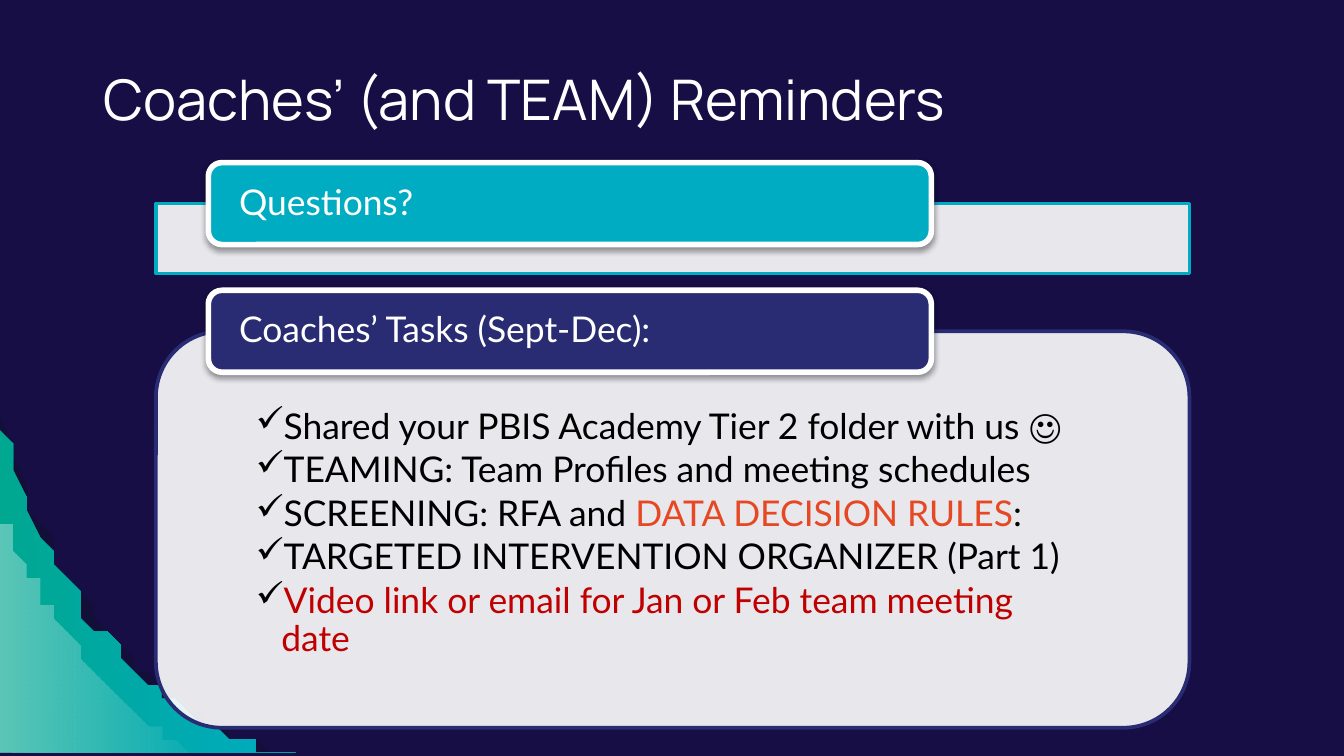
from lxml import etree
from pptx import Presentation
from pptx.dml.color import RGBColor
from pptx.enum.shapes import MSO_SHAPE
from pptx.enum.text import MSO_ANCHOR, PP_ALIGN
from pptx.oxml.ns import qn
from pptx.util import Inches, Pt

RECT, ROUND = MSO_SHAPE.RECTANGLE, MSO_SHAPE.ROUNDED_RECTANGLE
TOP, MIDDLE, LEFT = MSO_ANCHOR.TOP, MSO_ANCHOR.MIDDLE, PP_ALIGN.LEFT
COL = ROW = Inches(0.1)
CYAN, GREEN, NAVY, WHITE, BLACK = "00ACC2", "00A791", "292C73", "FFFFFF", "000000"


def paint(color, hex_color, alpha=100):
    color.rgb = RGBColor.from_string(hex_color)
    if alpha < 100:
        for clr in color._xFill.iter(qn("a:srgbClr")) if hasattr(color, "_xFill") else []:
            etree.SubElement(clr, qn("a:alpha"), val=str(alpha * 1000))


def set_alpha(sp, alphas):
    colors = sp._element.spPr.iter(qn("a:srgbClr"))
    for clr, alpha in zip(colors, alphas):
        etree.SubElement(clr, qn("a:alpha"), val=str(alpha * 1000))


prs = Presentation()
prs.slide_width, prs.slide_height = 100 * COL, Inches(5.625)
slide = prs.slides.add_slide(prs.slide_layouts[6])
bg = slide.background.fill
bg.solid()
paint(bg.fore_color, "160E44")

bottom = 56.25
waves = [
    [(0, 31), (7.3, 55.4), (22.7, bottom), (22.7, bottom)],
    [(0, 31.6), (7.2, 55.5), (22.1, bottom), (22.1, bottom)],
    [(0, 38), (0, 38), (6.9, 55.1), (16.2, bottom)],
]
wave_fills = [(["12102F"], [54]), ([GREEN, CYAN], [100, 100]), ([WHITE, WHITE], [36, 0])]
for curve, (colors, alphas) in zip(waves, wave_fills):
    points = []
    for step in range(41):
        t = step / 40
        weights = [(1 - t) ** 3, 3 * t * (1 - t) ** 2, 3 * t * t * (1 - t), t ** 3]
        points.append([sum(w * pt[axis] for w, pt in zip(weights, curve)) for axis in (0, 1)])
    builder = slide.shapes.build_freeform(*points[0], scale=COL)
    builder.add_line_segments(points[1:] + [(0, bottom)], close=True)
    sp = builder.convert_to_shape()
    sp.shadow.inherit = False
    sp.line.fill.background()
    if len(colors) == 1:
        sp.fill.solid()
        paint(sp.fill.fore_color, colors[0])
    else:
        sp.fill.gradient()
        sp.fill.gradient_angle = 0
        for stop, position, color in zip(sp.fill.gradient_stops, (0, 1), colors):
            stop.position = position
            paint(stop.color, color)
    set_alpha(sp, alphas)

tasks = [
    [("Shared your PBIS Academy Tier 2 folder with us ☺", BLACK)],
    [("TEAMING: Team Profiles and meeting schedules", BLACK)],
    [("SCREENING: RFA and ", BLACK), ("DATA DECISION RULES", "E64823"), (":", BLACK)],
    [("TARGETED INTERVENTION ORGANIZER (Part 1)", BLACK)],
    [("Video link or email for Jan or Feb team meeting date", "C00000")],
]
sections = [
    ("Questions?", CYAN, RECT, 5.2, []),
    ("Coaches’ Tasks (Sept-Dec):", NAVY, ROUND, 29.5, tasks),
]
for i, (heading, color, outline, height, items) in enumerate(sections):
    top = 12.1 + 9.5 * i
    panel = (outline, 11.6, top + 3.05, 76.9, height, WHITE, color, 2, 6, 4.3, TOP, items)
    header = (ROUND, 15.5, top, 53.8, 6.1, color, WHITE, 3, 2, 0, MIDDLE, [[(heading, WHITE)]])
    for kind, x, y, w, h, fill, line, weight, side, inset, anchor, paragraphs in (panel, header):
        sp = slide.shapes.add_shape(kind, int(x * COL), int(y * ROW), int(w * COL), int(h * ROW))
        sp.shadow.inherit = False
        sp.fill.solid()
        paint(sp.fill.fore_color, fill)
        if anchor == TOP:
            set_alpha(sp, [90])
        else:
            effects = sp._element.spPr.find(qn("a:effectLst"))
            shadow = etree.SubElement(effects, qn("a:outerShdw"), blurRad=str(Pt(3.1)),
                                      dist=str(Pt(1.6)), dir="5400000", rotWithShape="0")
            black = etree.SubElement(shadow, qn("a:srgbClr"), val=BLACK)
            etree.SubElement(black, qn("a:alpha"), val="38000")
        paint(sp.line.color, line)
        sp.line.width = Pt(weight)
        tf = sp.text_frame
        tf.word_wrap = True
        tf.vertical_anchor = anchor
        tf.margin_left = tf.margin_right = side * COL
        tf.margin_top, tf.margin_bottom = int(inset * ROW), 0
        for n, runs in enumerate(paragraphs):
            p = tf.add_paragraph() if n else tf.paragraphs[0]
            p.alignment = LEFT
            p.line_spacing = 0.9
            p.space_after = Pt(2.85 if anchor == TOP else 6.65)
            if anchor == TOP:
                pPr = p._p.get_or_add_pPr()
                pPr.set("lvl", "1")
                pPr.set("marL", str(Inches(0.19)))
                pPr.set("indent", str(-Inches(0.19)))
                bullet_color = etree.SubElement(pPr, qn("a:buClr"))
                etree.SubElement(bullet_color, qn("a:srgbClr"), val=BLACK)
                etree.SubElement(pPr, qn("a:buChar"), char="✓")
            for text, text_color in runs:
                r = p.add_run()
                r.text = text
                r.font.name, r.font.size = "Lato", Pt(19)
                paint(r.font.color, text_color)

title = slide.shapes.add_textbox(int(6.7 * COL), int(3.8 * ROW), int(76.9 * COL), int(6.9 * ROW))
tf = title.text_frame
tf.word_wrap = True
tf.margin_left = tf.margin_right = tf.margin_top = tf.margin_bottom = COL
tf.text = "Coaches’ (and TEAM) Reminders"
r = tf.paragraphs[0].runs[0]
r.font.name, r.font.size = "Manrope", Pt(30)
paint(r.font.color, WHITE)

prs.save("out.pptx")
